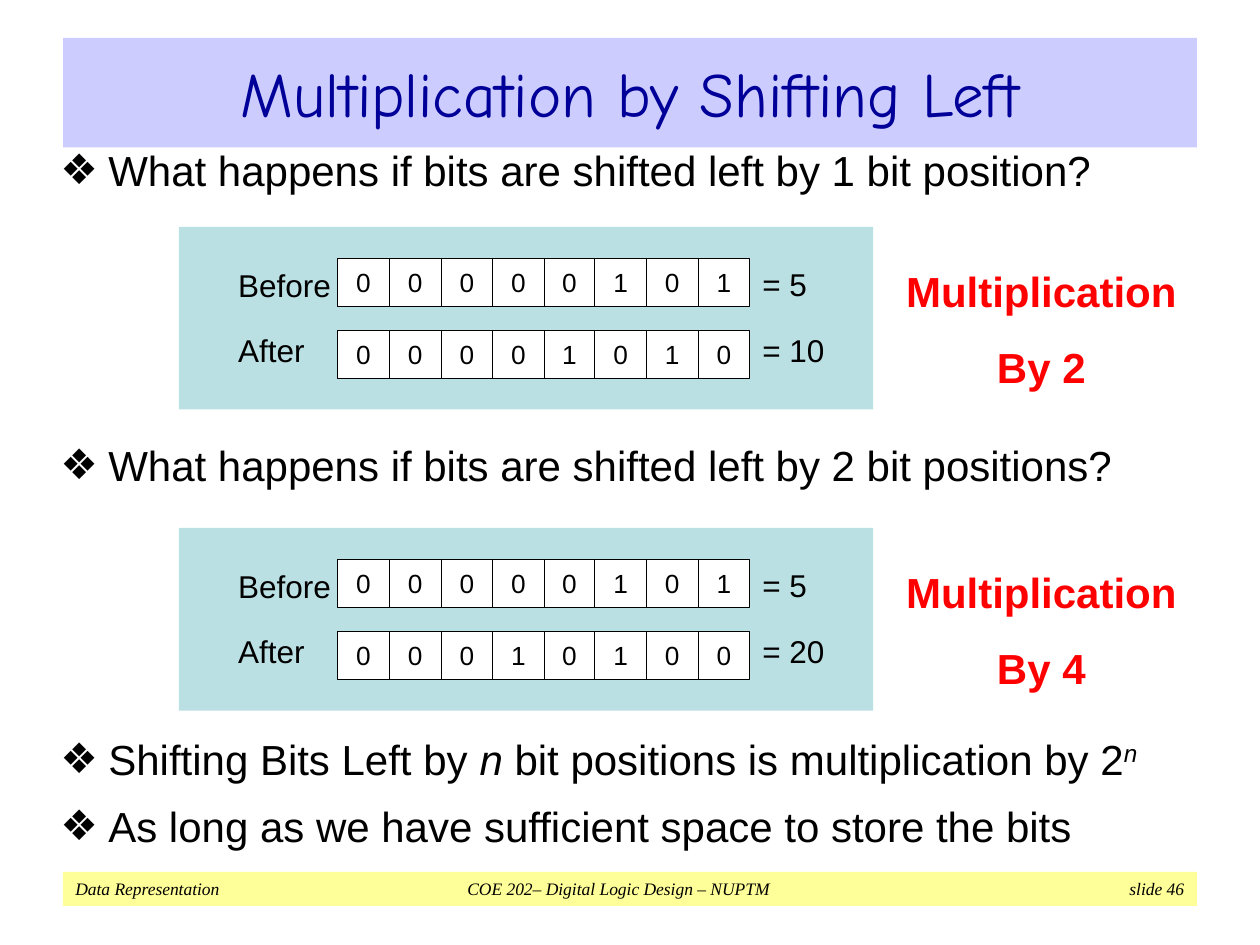
from dataclasses import dataclass
from lxml.etree import SubElement
from pptx import Presentation
from pptx.dml.color import RGBColor
from pptx.enum.shapes import MSO_SHAPE
from pptx.enum.text import MSO_ANCHOR, MSO_AUTO_SIZE, PP_ALIGN
from pptx.oxml.ns import qn
from pptx.util import Emu, Pt

SCALE = 9144


def px(count: int) -> Emu:
    return Emu(count * SCALE)


@dataclass(frozen=True)
class Theme:
    ink: str = "000000"
    navy: str = "000099"
    red: str = "FF0000"
    white: str = "FFFFFF"
    lilac: str = "CCCCFF"
    teal: str = "BBE0E3"
    yellow: str = "FFFF99"
    sans: str = "Arial"
    comic: str = "Comic Neue"
    serif: str = "Times New Roman"
    head: int = 36
    body: int = 24
    label: int = 18
    digit: int = 15
    foot: int = 10


@dataclass(frozen=True)
class Box:
    left: int
    top: int
    width: int
    height: int


@dataclass(frozen=True)
class Part:
    text: str
    slant: bool = False
    lift: int = 0


@dataclass(frozen=True)
class Points:
    box: Box
    lines: tuple


@dataclass(frozen=True)
class Row:
    name: str
    bits: str
    value: str
    cell_top: int
    name_top: int
    value_top: int


@dataclass(frozen=True)
class Case:
    top: int
    after: str
    value: str
    factor: str


THEME = Theme()
LISTS = (
    Points(Box(38, 110, 912, 57),
           ((Part("What happens if bits are shifted left by 1 bit position?"),),)),
    Points(Box(38, 344, 891, 57),
           ((Part("What happens if bits are shifted left by 2 bit positions?"),),)),
    Points(Box(38, 577, 912, 107),
           ((Part("Shifting Bits Left by "), Part("n", True),
             Part(" bit positions is multiplication by 2"), Part("n", True, 30000)),
            (Part("As long as we have sufficient space to store the bits"),))),
)
CASES = (
    Case(180, "00001010", "= 10", "By 2"),
    Case(419, "00010100", "= 20", "By 4"),
)


def place(shape, box: Box) -> None:
    shape.left, shape.top = px(box.left), px(box.top)
    shape.width, shape.height = px(box.width), px(box.height)


def paint(shape, color: str) -> None:
    shape.fill.solid()
    shape.fill.fore_color.rgb = RGBColor.from_string(color)


def style(run, size: int, color: str = THEME.ink, face: str = THEME.sans,
          bold: bool = False, slant: bool = False) -> None:
    font = run.font
    font.size, font.name, font.bold, font.italic = Pt(size), face, bold, slant
    font.color.rgb = RGBColor.from_string(color)


def trim(frame) -> None:
    frame.margin_left = frame.margin_right = 0
    frame.margin_top = frame.margin_bottom = 0


def add_rect(shapes, box: Box, color: str, edge: bool = False):
    rect = shapes.add_shape(MSO_SHAPE.RECTANGLE, px(box.left), px(box.top),
                            px(box.width), px(box.height))
    rect.shadow.inherit = False
    paint(rect, color)
    if edge:
        rect.line.color.rgb = RGBColor.from_string(THEME.ink)
        rect.line.width = Pt(0.38)
    else:
        rect.line.fill.background()
    return rect


def add_label(shapes, box: Box, text: str) -> None:
    label = shapes.add_textbox(px(box.left), px(box.top), px(box.width), px(box.height))
    frame = label.text_frame
    trim(frame)
    frame.word_wrap = False
    frame.text = text
    style(frame.paragraphs[0].runs[0], THEME.label)


def add_row(shapes, row: Row) -> None:
    add_label(shapes, Box(189, row.name_top, 74, 30), row.name)
    start, span = 268, 327
    edges = [start + round(span * i / len(row.bits)) for i in range(len(row.bits) + 1)]
    for bit, left, right in zip(row.bits, edges, edges[1:]):
        cell = add_rect(shapes, Box(left, row.cell_top, right - left, 38), THEME.white, True)
        frame = cell.text_frame
        trim(frame)
        frame.vertical_anchor = MSO_ANCHOR.MIDDLE
        frame.text = bit
        para = frame.paragraphs[0]
        para.alignment = PP_ALIGN.CENTER
        style(para.runs[0], THEME.digit)
    add_label(shapes, Box(605, row.value_top, 57, 30), row.value)


def add_case(slide, case: Case) -> None:
    top = case.top
    shapes = slide.shapes.add_group_shape().shapes
    add_rect(shapes, Box(142, top, 551, 145), THEME.teal)
    add_row(shapes, Row("Before", "00000101", "= 5", top + 25, top + 31, top + 30))
    add_row(shapes, Row("After", case.after, case.value, top + 82, top + 83, top + 83))
    note = slide.shapes.add_textbox(px(708), px(top + 6), px(237), px(131))
    frame = note.text_frame
    frame.word_wrap = False
    frame.text = f"Multiplication\n{case.factor}"
    for para in frame.paragraphs:
        para.alignment = PP_ALIGN.CENTER
        para.line_spacing = 1.5
        style(para.runs[0], THEME.body, THEME.red, bold=True)


def set_bullet(para) -> None:
    props = para._p.get_or_add_pPr()
    props.set("marL", str(px(38)))
    props.set("indent", str(-px(38)))
    space = SubElement(props, qn("a:spcBef"))
    SubElement(space, qn("a:spcPct")).set("val", "40000")
    SubElement(props, qn("a:buChar")).set("char", "❖")


def fill_list(holder, points: Points) -> None:
    place(holder, points.box)
    frame = holder.text_frame
    frame.auto_size = MSO_AUTO_SIZE.NONE
    frame.vertical_anchor = MSO_ANCHOR.TOP
    for count, line in enumerate(points.lines):
        para = frame.add_paragraph() if count else frame.paragraphs[0]
        set_bullet(para)
        for part in line:
            run = para.add_run()
            run.text = part.text
            style(run, THEME.body, slant=part.slant)
            if part.lift:
                run._r.get_or_add_rPr().set("baseline", str(part.lift))


def fill_title(title) -> None:
    place(title, Box(50, 30, 900, 87))
    paint(title, THEME.lilac)
    frame = title.text_frame
    frame.auto_size = MSO_AUTO_SIZE.NONE
    frame.vertical_anchor = MSO_ANCHOR.MIDDLE
    frame.text = "Multiplication by Shifting Left"
    para = frame.paragraphs[0]
    para.alignment = PP_ALIGN.CENTER
    style(para.runs[0], THEME.head, THEME.navy, THEME.comic)


def add_foot(slide) -> None:
    bar = add_rect(slide.shapes, Box(50, 692, 900, 27), THEME.yellow)
    frame = bar.text_frame
    frame.vertical_anchor = MSO_ANCHOR.MIDDLE
    frame.text = "Data Representation\tCOE 202– Digital Logic Design – NUPTM\tslide 46"
    para = frame.paragraphs[0]
    para.alignment = PP_ALIGN.LEFT
    stops = SubElement(para._p.get_or_add_pPr(), qn("a:tabLst"))
    for spot, side in ((431, "ctr"), (880, "r")):
        stop = SubElement(stops, qn("a:tab"))
        stop.set("pos", str(px(spot)))
        stop.set("algn", side)
    style(para.runs[0], THEME.foot, face=THEME.serif, slant=True)


def main() -> None:
    deck = Presentation()
    deck.slide_width, deck.slide_height = px(1000), px(750)
    slide = deck.slides.add_slide(deck.slide_layouts.get_by_name("Comparison"))
    add_foot(slide)
    fill_title(slide.shapes.title)
    title, *bodies = slide.placeholders
    for holder, points in zip(bodies, LISTS):
        fill_list(holder, points)
    for spare in bodies[len(LISTS):]:
        spare._element.getparent().remove(spare._element)
    for case in CASES:
        add_case(slide, case)
    deck.save("out.pptx")


if __name__ == "__main__":
    main()
